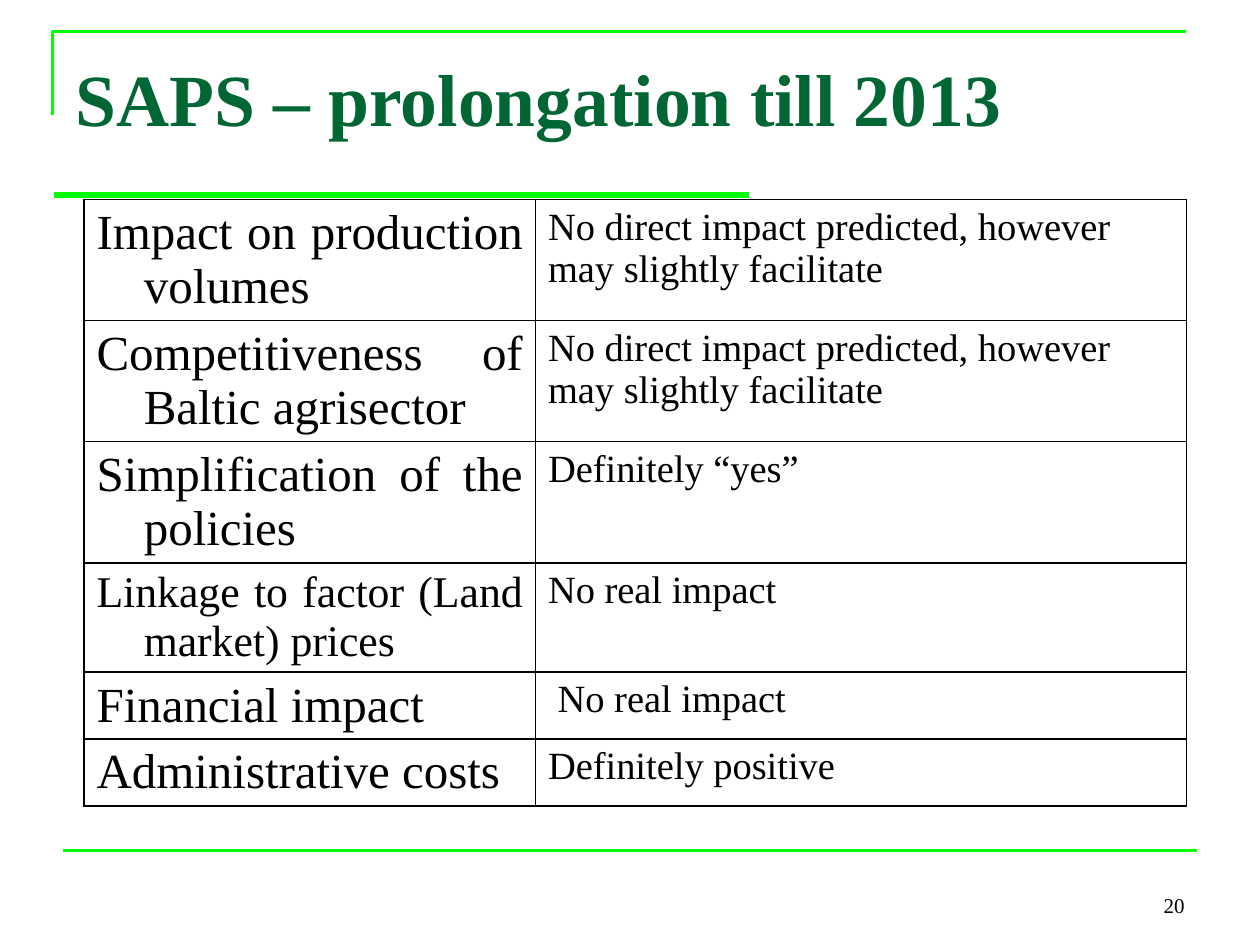
"""Build the slide on the impacts of prolonging SAPS till 2013."""
from lxml import etree
from pptx import Presentation
from pptx.dml.color import RGBColor
from pptx.enum.shapes import MSO_CONNECTOR
from pptx.enum.text import MSO_ANCHOR, PP_ALIGN
from pptx.oxml.ns import qn
from pptx.util import Pt

LEFT, RIGHT, JUSTIFY = PP_ALIGN.LEFT, PP_ALIGN.RIGHT, PP_ALIGN.JUSTIFY
TOP, BOTTOM = MSO_ANCHOR.TOP, MSO_ANCHOR.BOTTOM
STRAIGHT = MSO_CONNECTOR.STRAIGHT

THEME = {
    "font": "Times New Roman",
    "title": "006633",
    "text": "000000",
    "rule": "00FF00",
    "title_size": 42,
    "aspect_size": 28,
    "small_aspect_size": 25,
    "finding_size": 22,
    "number_size": 12,
}

TITLE = "SAPS – prolongation till 2013"
PAGE_NUMBER = "20"
FACILITATE = "No direct impact predicted, however may slightly facilitate"
IMPACTS = [
    {"aspect": "Impact on production volumes", "finding": FACILITATE, "height": 52},
    {"aspect": "Competitiveness of Baltic agrisector", "finding": FACILITATE, "height": 52},
    {"aspect": "Simplification of the policies", "finding": "Definitely “yes”", "height": 52},
    {"aspect": "Linkage to factor (Land market) prices", "finding": "No real impact",
     "height": 47, "aspect_size": THEME["small_aspect_size"]},
    {"aspect": "Financial impact", "finding": "No real impact", "height": 34.5,
     "finding_indent": 5.5},
    {"aspect": "Administrative costs", "finding": "Definitely positive", "height": 34.5},
]

COLUMN_WIDTHS = (258, 372)
TABLE_LEFT, TABLE_TOP = 48, 114
CORNER = [(30, 66), (30, 18), (678, 18)]
RULES = [((36, 486), (684, 486), 1.5), ((31, 111.5), (428, 111.5), 3)]


def color(name):
    return RGBColor.from_string(THEME[name])


def write(frame, text, size, ink="text", bold=False, align=LEFT, margin=0, hanging=0):
    frame.word_wrap = True
    paragraph = frame.paragraphs[0]
    paragraph.text = text
    paragraph.alignment = align
    properties = paragraph._p.get_or_add_pPr()
    properties.set("marL", str(Pt(margin)))
    properties.set("indent", str(-Pt(hanging)))
    font = paragraph.runs[0].font
    font.name, font.size, font.bold = THEME["font"], Pt(size), bold
    font.color.rgb = color(ink)


def style_rule(rule, width):
    rule.line.color.rgb = color("rule")
    rule.line.width = Pt(width)


def add_rules(shapes):
    start, *rest = [(Pt(x), Pt(y)) for x, y in CORNER]
    builder = shapes.build_freeform(*start)
    builder.add_line_segments(rest, close=False)
    corner = builder.convert_to_shape()
    corner.fill.background()
    corner.shadow.inherit = False
    style_rule(corner, 1.5)
    for (x1, y1), (x2, y2), width in RULES:
        rule = shapes.add_connector(STRAIGHT, Pt(x1), Pt(y1), Pt(x2), Pt(y2))
        style_rule(rule, width)
        etree.SubElement(rule._element.spPr, qn("a:effectLst"))


def add_borders(cell):
    properties = cell._tc.get_or_add_tcPr()
    for position, side in enumerate(("a:lnL", "a:lnR", "a:lnT", "a:lnB")):
        border = etree.Element(qn(side), w=str(Pt(1)))
        fill = etree.SubElement(border, qn("a:solidFill"))
        etree.SubElement(fill, qn("a:srgbClr"), val=THEME["text"])
        properties.insert(position, border)


def add_impacts(shapes):
    height = sum(impact["height"] for impact in IMPACTS)
    table = shapes.add_table(len(IMPACTS), len(COLUMN_WIDTHS), Pt(TABLE_LEFT), Pt(TABLE_TOP),
                             Pt(sum(COLUMN_WIDTHS)), Pt(height)).table
    table.first_row = table.horz_banding = False
    for column, width in zip(table.columns, COLUMN_WIDTHS):
        column.width = Pt(width)
    for row, impact in zip(table.rows, IMPACTS):
        row.height = Pt(impact["height"])
        aspect, finding = row.cells
        write(aspect.text_frame, impact["aspect"],
              impact.get("aspect_size", THEME["aspect_size"]),
              align=JUSTIFY, margin=27, hanging=27)
        write(finding.text_frame, impact["finding"], THEME["finding_size"],
              margin=impact.get("finding_indent", 0))
        for cell in (aspect, finding):
            cell.fill.background()
            add_borders(cell)


def main():
    deck = Presentation()
    deck.slide_width, deck.slide_height = Pt(720), Pt(540)
    slide = deck.slides.add_slide(deck.slide_layouts[5])
    shapes = slide.shapes

    heading = shapes.title
    heading.left, heading.top, heading.width, heading.height = Pt(36), Pt(21.6), Pt(648), Pt(90)
    heading.text_frame.vertical_anchor = TOP
    heading.text_frame.margin_top = Pt(8.5)
    write(heading.text_frame, TITLE, THEME["title_size"], ink="title", bold=True)

    add_rules(shapes)
    add_impacts(shapes)

    page_number = shapes.add_textbox(Pt(642), Pt(492), Pt(42), Pt(36))
    page_number.text_frame.vertical_anchor = BOTTOM
    write(page_number.text_frame, PAGE_NUMBER, THEME["number_size"], align=RIGHT)

    deck.save("out.pptx")


if __name__ == "__main__":
    main()
